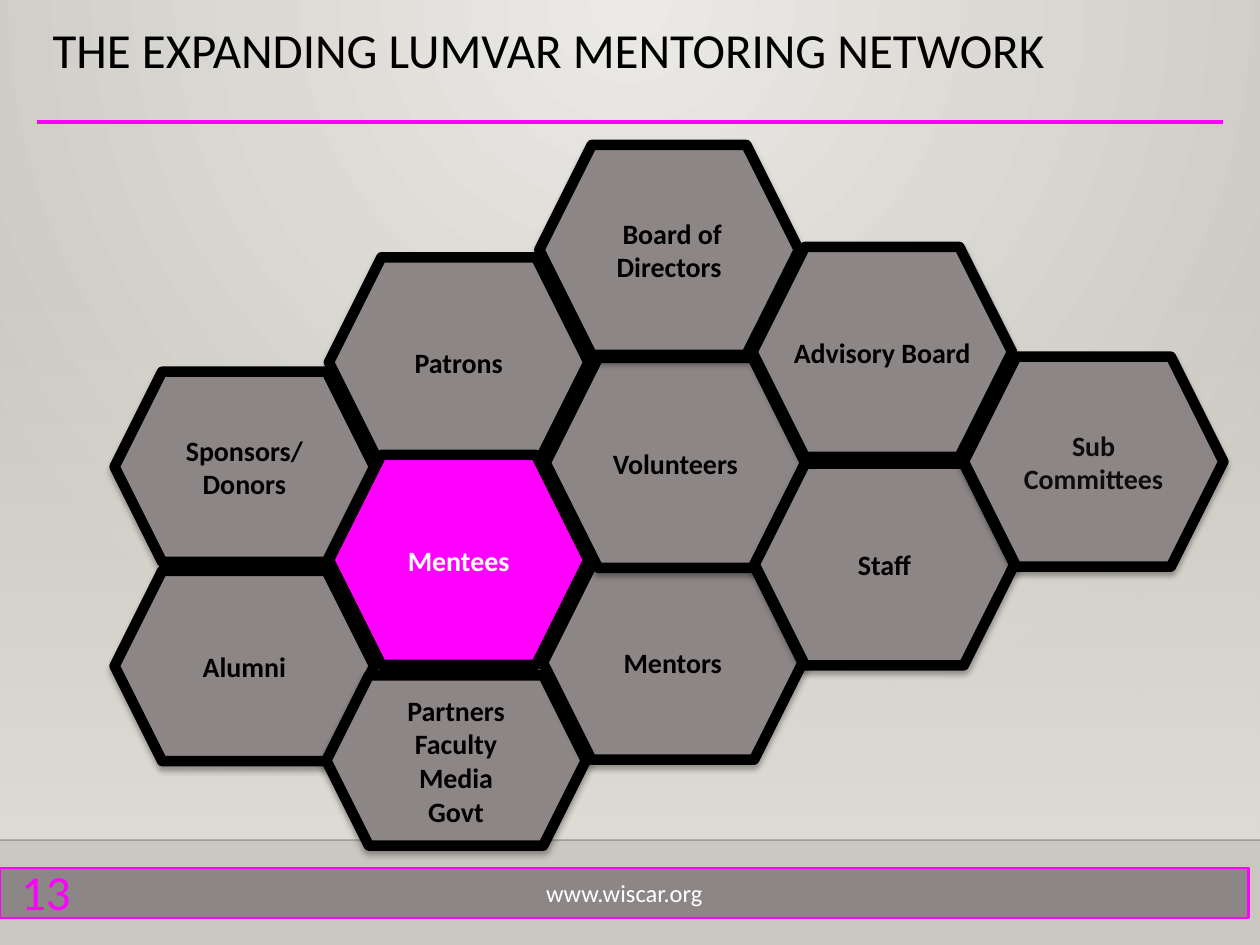
from lxml.etree import SubElement
from pptx import Presentation
from pptx.dml.color import RGBColor
from pptx.enum.shapes import MSO_CONNECTOR, MSO_SHAPE
from pptx.enum.text import MSO_ANCHOR, PP_ALIGN
from pptx.oxml.ns import qn
from pptx.util import Pt

GREY, MAGENTA, BLACK, WHITE = "8C8786", "FE00FE", "000000", "FFFFFF"
SAND = "DFDBD5"
HEXAGON_WIDTH = 148.3

# left, top, height, text, and any colours that differ
HEXAGONS = [
    (188, 147, 120, "Patrons", {}),
    (65.5, 212.4, 108.7, "Sponsors/\nDonors", {}),
    (65.5, 326.2, 108.7, "Alumni", {}),
    (188, 260, 120, "Mentees", {"fill": MAGENTA, "color": WHITE}),
    (186.5, 386, 97.2, "Partners\nFaculty\nMedia\nGovt", {}),
    (310.3, 323.3, 110.9, "Mentors", {}),
    (311.8, 204.5, 120, "Volunteers", {}),
    (308.2, 82.8, 120, " Board of Directors", {}),
    (430, 141.1, 120, "Advisory Board", {}),
    (431.3, 265, 115.2, "Staff", {}),
    (550.8, 203.8, 120, "Sub Committees", {"color": "0D0D0D"}),
]


def rgb(value):
    return RGBColor.from_string(value)


def set_alpha(element, percent):
    """Set the opacity of every colour inside an element."""
    for color in element.iter(qn("a:srgbClr")):
        SubElement(color, qn("a:alpha"), val=str(percent * 1000))


class SlideBuilder:
    font = "Calibri"

    def __init__(self, slide):
        self.slide = slide

    def background(self, inner, outer):
        fill = self.slide.background.fill
        fill.gradient()
        self.color_stops(fill, inner, outer)
        gradient = next(self.slide.element.iter(qn("a:gradFill")))
        gradient.remove(gradient.find(qn("a:lin")))
        circle = SubElement(gradient, qn("a:path"), {"path": "circle"})
        SubElement(circle, qn("a:fillToRect"),
                   l="43000", t="0", r="43000", b="100000")

    def color_stops(self, fill, first, last):
        for stop, color, position in zip(fill.gradient_stops, (first, last), (0, 1)):
            stop.color.rgb = rgb(color)
            stop.position = position

    def fade(self, left, top, width, height, color):
        """Add a rectangle that goes from clear at the top to solid."""
        shape = self.shape(MSO_SHAPE.RECTANGLE, left, top, width, height)
        shape.line.fill.background()
        shape.fill.gradient()
        shape.fill.gradient_angle = 270
        self.color_stops(shape.fill, color, color)
        set_alpha(next(shape.element.iter(qn("a:gs"))), 0)

    def shape(self, kind, left, top, width, height):
        shape = self.slide.shapes.add_shape(
            kind, Pt(left), Pt(top), Pt(width), Pt(height))
        shape.shadow.inherit = False
        return shape

    def filled(self, kind, left, top, width, height, fill, line, weight):
        shape = self.shape(kind, left, top, width, height)
        shape.fill.solid()
        shape.fill.fore_color.rgb = rgb(fill)
        shape.line.color.rgb = rgb(line)
        shape.line.width = Pt(weight)
        return shape

    def bar(self, left, top, width, height, text):
        shape = self.filled(MSO_SHAPE.RECTANGLE, left, top, width, height,
                            GREY, MAGENTA, 1.25)
        self.add_text(shape, text, WHITE, 14, PP_ALIGN.CENTER)

    def hexagon(self, left, top, height, text, fill=GREY, color=BLACK):
        shape = self.filled(MSO_SHAPE.HEXAGON, left, top, HEXAGON_WIDTH, height,
                            fill, BLACK, 6)
        properties = shape.element.spPr
        SubElement(properties.find(qn("a:ln")), qn("a:round"))
        shadow = SubElement(properties.find(qn("a:effectLst")), qn("a:outerShdw"),
                            blurRad=str(Pt(3.5)), dist=str(Pt(2.2)),
                            dir="5400000", rotWithShape="0")
        SubElement(shadow, qn("a:srgbClr"), val=BLACK)
        set_alpha(shadow, 32)
        shape.text_frame.margin_left = shape.text_frame.margin_right = Pt(0.9)
        self.add_text(shape, text, color, 16, PP_ALIGN.CENTER, bold=True)

    def rule(self, left, right, top, color, weight, alpha=100):
        line = self.slide.shapes.add_connector(
            MSO_CONNECTOR.STRAIGHT, Pt(left), Pt(top), Pt(right), Pt(top))
        line.line.color.rgb = rgb(color)
        line.line.width = Pt(weight)
        if alpha < 100:
            set_alpha(line.element.spPr, alpha)
        SubElement(line.element.spPr, qn("a:effectLst"))

    def label(self, left, top, width, height, text, color, align, spacing=1):
        box = self.slide.shapes.add_textbox(
            Pt(left), Pt(top), Pt(width), Pt(height))
        self.add_text(box, text, color, 28, align, MSO_ANCHOR.TOP, spacing=spacing)

    def add_text(self, box, text, color, size, align, anchor=MSO_ANCHOR.MIDDLE,
                 bold=False, spacing=1):
        frame = box.text_frame
        frame.word_wrap = True
        frame.vertical_anchor = anchor
        font_format = {"name": self.font, "size": Pt(size), "bold": bold}
        for index, line in enumerate(text.split("\n")):
            para = frame.add_paragraph() if index else frame.paragraphs[0]
            para.alignment = align
            para.line_spacing = spacing
            span = para.add_run()
            span.text = line
            for name, value in font_format.items():
                setattr(span.font, name, value)
            span.font.color.rgb = rgb(color)


def main():
    deck = Presentation()
    deck.slide_width, deck.slide_height = Pt(720), Pt(540)
    page = SlideBuilder(deck.slides.add_slide(deck.slide_layouts[6]))

    page.background("ECEAE7", "CAC7C1")
    page.fade(0, 158.4, 720, 321.6, SAND)
    page.rule(0, 720, 480, "000001", 1, alpha=20)
    page.bar(0, 496, 713.5, 28.8, "www.wiscar.org")
    page.rule(21, 699, 69.8, MAGENTA, 2.5)
    page.label(23, 11.5, 678, 49.7, "THE EXPANDING LUMVAR MENTORING NETWORK",
               BLACK, PP_ALIGN.LEFT, spacing=0.9)
    for left, top, height, text, colors in HEXAGONS:
        page.hexagon(left, top, height, text, **colors)
    page.label(-15, 489, 62.5, 39.6, "13", MAGENTA, PP_ALIGN.RIGHT)

    deck.save("out.pptx")


if __name__ == "__main__":
    main()
